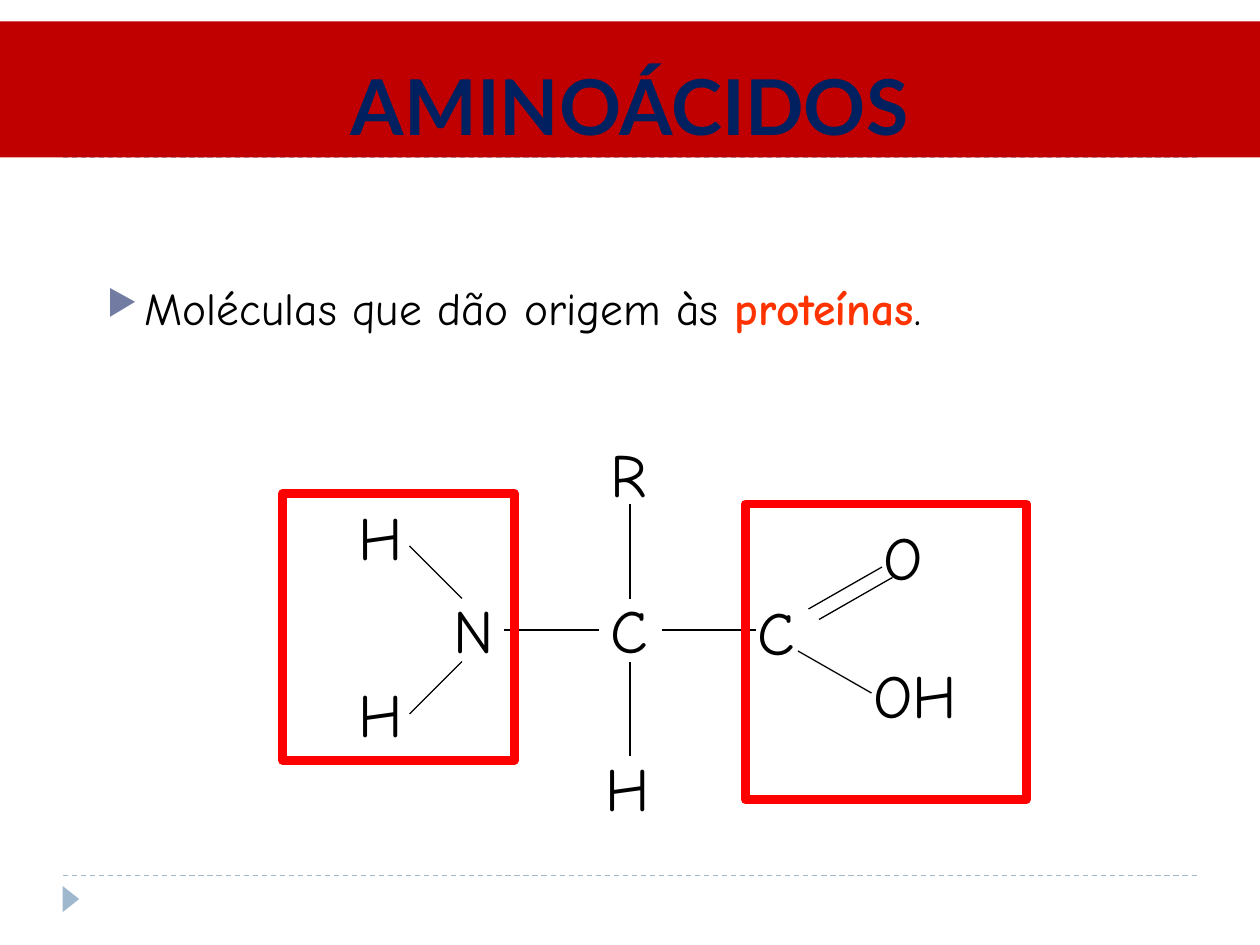
import dataclasses

import lxml.etree
import pptx
import pptx.dml.color
import pptx.enum.dml
import pptx.enum.shapes
import pptx.enum.text
import pptx.oxml.ns
import pptx.util

Pt = pptx.util.Pt
SHAPES = pptx.enum.shapes.MSO_SHAPE
BODY_FONT = "Comic Neue"
BLACK = "000000"
PALE_BLUE = "9FB8CD"


@dataclasses.dataclass
class Box:
    left: float
    top: float
    width: float
    height: float

    def lengths(self) -> list:
        return [Pt(value) for value in dataclasses.astuple(self)]


@dataclasses.dataclass
class Atom:
    symbol: str
    left: float
    top: float
    width: float = 42
    height: float = 49


@dataclasses.dataclass
class Bond:
    start: tuple[float, float]
    end: tuple[float, float]


ATOMS = [
    Atom("C", 342, 335),
    Atom("N", 252, 335),
    Atom("H", 339, 425),
    Atom("R", 342, 246),
    Atom("C", 426, 336),
    Atom("OH", 492, 372, 66, 91),
    Atom("O", 498, 293),
    Atom("H", 198, 282),
    Atom("H", 198, 383),
]
BONDS = [
    Bond((462, 348), (504, 324)),
    Bond((468, 354), (510, 330)),
    Bond((456, 372), (498, 396)),
    Bond((378, 360), (432, 360)),
    Bond((288, 360), (342, 360)),
    Bond((360, 342), (360, 288)),
    Bond((360, 432), (360, 378)),
    Bond((234, 312), (264, 342)),
    Bond((234, 408), (264, 378)),
]
GROUP_FRAMES = [Box(426, 288, 160.5, 169), Box(161.5, 282, 132.5, 152.5)]


def color(value: str) -> pptx.dml.color.RGBColor:
    return pptx.dml.color.RGBColor.from_string(value)


def add_run(paragraph, text: str, text_color: str, **formats) -> None:
    run = paragraph.add_run()
    run.text = text
    run.font.color.rgb = color(text_color)
    for name, value in formats.items():
        setattr(run.font, name, value)


def add_line(slide, bond: Bond, line_color: str, dashed: bool = False) -> None:
    points = [Pt(value) for value in bond.start + bond.end]
    connector = slide.shapes.add_connector(
        pptx.enum.shapes.MSO_CONNECTOR.STRAIGHT, *points)
    connector.line.color.rgb = color(line_color)
    connector.line.width = Pt(0.75)
    if dashed:
        connector.line.dash_style = pptx.enum.dml.MSO_LINE.DASH
    properties = connector.element.spPr
    lxml.etree.SubElement(properties, pptx.oxml.ns.qn("a:effectLst"))


def add_text_box(slide, box: Box):
    frame = slide.shapes.add_textbox(*box.lengths()).text_frame
    frame.word_wrap = True
    return frame.paragraphs[0]


def add_atom(slide, atom: Atom) -> None:
    box = Box(atom.left, atom.top, atom.width, atom.height)
    add_run(add_text_box(slide, box), atom.symbol, BLACK, name=BODY_FONT, size=Pt(35))


def add_group_frame(slide, box: Box) -> None:
    shape = slide.shapes.add_shape(SHAPES.RECTANGLE, *box.lengths())
    shape.shadow.inherit = False
    shape.fill.background()
    shape.line.color.rgb = color("FF0000")
    shape.line.width = Pt(5)


def add_bullet(paragraph) -> None:
    properties = paragraph._p.get_or_add_pPr()
    properties.set("marL", str(Pt(21.6)))
    properties.set("indent", str(Pt(-21.6)))
    bullet_color = lxml.etree.SubElement(properties, pptx.oxml.ns.qn("a:buClr"))
    for parent, tag, attribute, value in [
        (bullet_color, "a:srgbClr", "val", "727CA3"),
        (properties, "a:buSzPct", "val", "76000"),
        (properties, "a:buChar", "char", "▶"),
    ]:
        lxml.etree.SubElement(parent, pptx.oxml.ns.qn(tag)).set(attribute, value)


def add_decoration(slide) -> None:
    for top in (500.4, 90):
        add_line(slide, Bond((36, top), (684, top)), PALE_BLUE, dashed=True)
    marker = slide.shapes.add_shape(
        SHAPES.ISOSCELES_TRIANGLE, *Box(33, 509, 15, 9.5).lengths())
    marker.rotation = 90
    marker.shadow.inherit = False
    marker.fill.solid()
    marker.fill.fore_color.rgb = color(PALE_BLUE)
    marker.line.fill.background()


def format_title(slide) -> None:
    title = slide.shapes.title
    box = Box(0, 12.2, 720, 77.8)
    for name, value in zip(("left", "top", "width", "height"), box.lengths()):
        setattr(title, name, value)
    title.fill.solid()
    title.fill.fore_color.rgb = color("C00000")
    frame_formats = {
        "vertical_anchor": pptx.enum.text.MSO_ANCHOR.BOTTOM,
        "auto_size": pptx.enum.text.MSO_AUTO_SIZE.NONE,
        "word_wrap": True,
    }
    for name, value in frame_formats.items():
        setattr(title.text_frame, name, value)
    paragraph = title.text_frame.paragraphs[0]
    paragraph.alignment = pptx.enum.text.PP_ALIGN.CENTER
    add_run(paragraph, "AMINOÁCIDOS", "002060", name="Lato", size=Pt(44), bold=True)
    # Bring the title band in front of the dashed rule
    title.element.getparent().append(title.element)


def add_statement(slide) -> None:
    paragraph = add_text_box(slide, Box(54, 156.2, 635, 60))
    paragraph.space_before = Pt(6)
    add_bullet(paragraph)
    for text, text_color, bold in [
        ("Moléculas que dão origem às ", BLACK, False),
        ("proteínas", "FF3300", True),
        (".", BLACK, False),
    ]:
        add_run(paragraph, text, text_color, name=BODY_FONT, size=Pt(26), bold=bold)


def main() -> None:
    presentation = pptx.Presentation()
    presentation.slide_width = Pt(720)
    presentation.slide_height = Pt(540)
    slide = presentation.slides.add_slide(presentation.slide_layouts[5])

    # Rules, corner marker, title and statement
    add_decoration(slide)
    format_title(slide)
    add_statement(slide)

    # Amino acid structure with its two functional groups framed
    for atom in ATOMS:
        add_atom(slide, atom)
    for bond in BONDS:
        add_line(slide, bond, BLACK)
    for frame in GROUP_FRAMES:
        add_group_frame(slide, frame)

    presentation.save("out.pptx")


if __name__ == "__main__":
    main()
